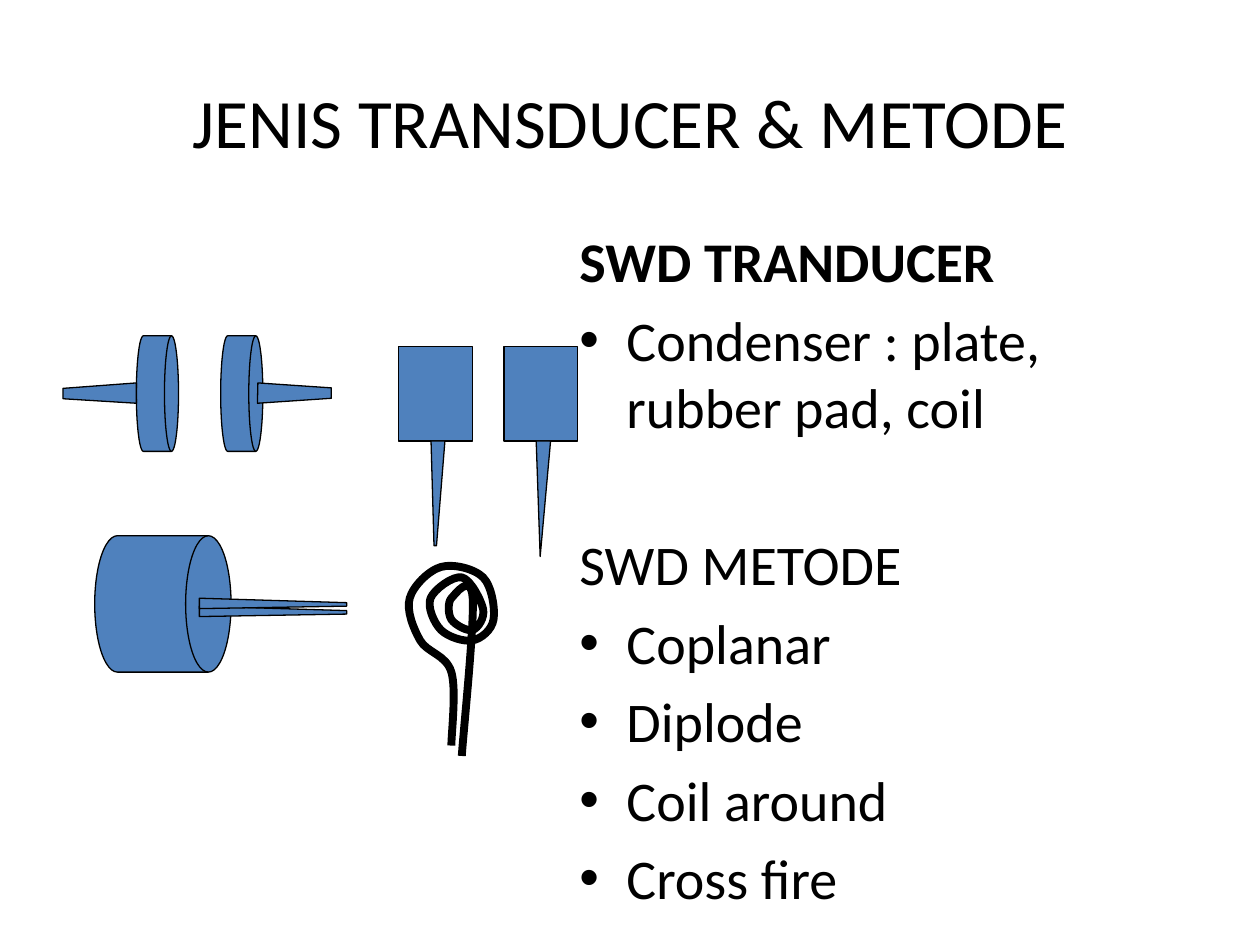
import pptx
import pptx.util
import pptx.dml.color
import pptx.enum.shapes
import pptx.enum.text
import pptx.oxml.ns
from lxml import etree

Cm, Pt = pptx.util.Cm, pptx.util.Pt
RGBColor = pptx.dml.color.RGBColor
SHAPES = pptx.enum.shapes.MSO_SHAPE
qn = pptx.oxml.ns.qn
BLACK = RGBColor(0x00, 0x00, 0x00)
BLUE = RGBColor(0x4F, 0x81, 0xBD)
FONT = "Calibri"

# Content: lengths in centimetres, spacing in points
TITLE = "JENIS TRANSDUCER & METODE"
BODY = [  # text, bulleted, bold, space before
    ("SWD TRANDUCER", False, True, 0),
    ("Condenser : plate, rubber pad, coil", True, False, 6.5),
    ("SWD METODE", False, False, 51.2),
    ("Coplanar", True, False, 6.5),
    ("Diplode", True, False, 6.5),
    ("Coil around", True, False, 6.5),
    ("Cross fire", True, False, 6.5),
]
DRUM, PLATE = SHAPES.FLOWCHART_DIRECT_ACCESS_STORAGE, SHAPES.RECTANGLE
ELECTRODES = [  # preset, left, top, width, height
    (DRUM, 2.75, 6.77, 0.85, 2.33),
    (DRUM, 4.45, 6.77, 0.85, 2.33),
    (PLATE, 8.04, 6.99, 1.48, 1.9),
    (PLATE, 10.16, 6.99, 1.48, 1.9),
    (DRUM, 1.91, 10.8, 2.75, 2.75),
]
HANDLES = [
    [(2.75, 7.72), (1.27, 7.83), (1.27, 8.04), (2.75, 8.13)],
    [(5.19, 8.13), (6.68, 8.03), (6.68, 7.82), (5.2, 7.72)],
    [(8.69, 8.89), (8.75, 11), (8.8, 11), (8.97, 8.89)],
    [(10.81, 8.89), (10.89, 11.22), (11.1, 8.89)],
    [(4.02, 12.43), (6.99, 12.38), (6.99, 12.31), (4.02, 12.22)],
    [(4.02, 12.27), (6.99, 12.22), (6.99, 12.15), (4.02, 12.06)],
]
COIL_KNOTS = [
    (9.1, 15.03), (9.1, 13.55), (8.47, 12.91), (8.26, 12.06), (8.89, 11.43),
    (9.74, 11.64), (9.95, 12.49), (9.53, 12.91), (8.89, 12.7), (8.68, 12.06),
    (9.31, 11.64), (9.74, 12.28), (9.53, 12.7), (9.1, 12.49), (9.1, 12.06),
    (9.53, 12.06), (9.31, 15.24),
]


def add_box(page, left, top, width, height):
    frame = page.shapes.add_textbox(Cm(left), Cm(top), Cm(width), Cm(height)).text_frame
    frame.word_wrap = True
    return frame


def style_font(para, size, bold=False):
    para.font.name, para.font.size, para.font.bold = FONT, Pt(size), bold
    para.font.color.rgb = BLACK


def style_shape(shape, fill, line_width):
    shape.shadow.inherit = False
    if fill is None:
        shape.fill.background()
    else:
        shape.fill.solid()
        shape.fill.fore_color.rgb = fill
    shape.line.color.rgb = BLACK
    shape.line.width = Pt(line_width)


def add_outline(page, points, close, fill, line_width):
    corners = [(Cm(x), Cm(y)) for x, y in points]
    builder = page.shapes.build_freeform(*corners[0])
    builder.add_line_segments(corners[1:], close=close)
    shape = builder.convert_to_shape()
    style_shape(shape, fill, line_width)
    return shape


def smooth_outline(shape):
    """Turn straight segments into Bezier curves through the same knots."""
    knots = [(int(point.get("x")), int(point.get("y")))
             for point in shape._element.iter(qn("a:pt"))]
    padded = [knots[0], *knots, knots[-1]]
    segments = list(shape._element.iter(qn("a:lnTo")))
    for segment, a, b, c, d in zip(segments, padded, padded[1:], padded[2:], padded[3:]):
        segment_curve = etree.Element(qn("a:cubicBezTo"))
        controls = (
            [q + (r - p) / 6 for p, q, r in zip(a, b, c)],
            [r - (s - q) / 6 for q, r, s in zip(b, c, d)],
            c,
        )
        for x, y in controls:
            point = etree.SubElement(segment_curve, qn("a:pt"))
            point.set("x", str(round(x)))
            point.set("y", str(round(y)))
        segment.getparent().replace(segment, segment_curve)


def main():
    deck = pptx.Presentation()
    deck.slide_width, deck.slide_height = Cm(25.4), Cm(19.05)
    page = deck.slides.add_slide(deck.slide_layouts[6])

    # Body text with hanging indents
    frame = add_box(page, 11.43, 4.45, 13.13, 13.33)
    for index, (text, bulleted, bold, space) in enumerate(BODY):
        para = frame.paragraphs[0] if index == 0 else frame.add_paragraph()
        para.text = text
        para.space_before = Pt(space)
        properties = para._p.get_or_add_pPr()
        properties.set("marL", str(Cm(0.95)))
        properties.set("indent", str(-Cm(0.95)))
        if bulleted:
            etree.SubElement(properties, qn("a:buFont")).set("typeface", "Arial")
            etree.SubElement(properties, qn("a:buChar")).set("char", "•")
        style_font(para, 32, bold)

    # Title
    frame = add_box(page, 1.91, 1.27, 21.59, 2.33)
    frame.vertical_anchor = pptx.enum.text.MSO_ANCHOR.MIDDLE
    para = frame.paragraphs[0]
    para.text = TITLE
    para.alignment = pptx.enum.text.PP_ALIGN.CENTER
    style_font(para, 39.6)

    # Electrodes, their handles and the coil
    for preset, *place in ELECTRODES:
        shape = page.shapes.add_shape(preset, *map(Cm, place))
        style_shape(shape, BLUE, 0.75)
    for points in HANDLES:
        add_outline(page, points, True, BLUE, 0.75)
    smooth_outline(add_outline(page, COIL_KNOTS, False, None, 4.5))

    deck.save("out.pptx")


if __name__ == "__main__":
    main()
